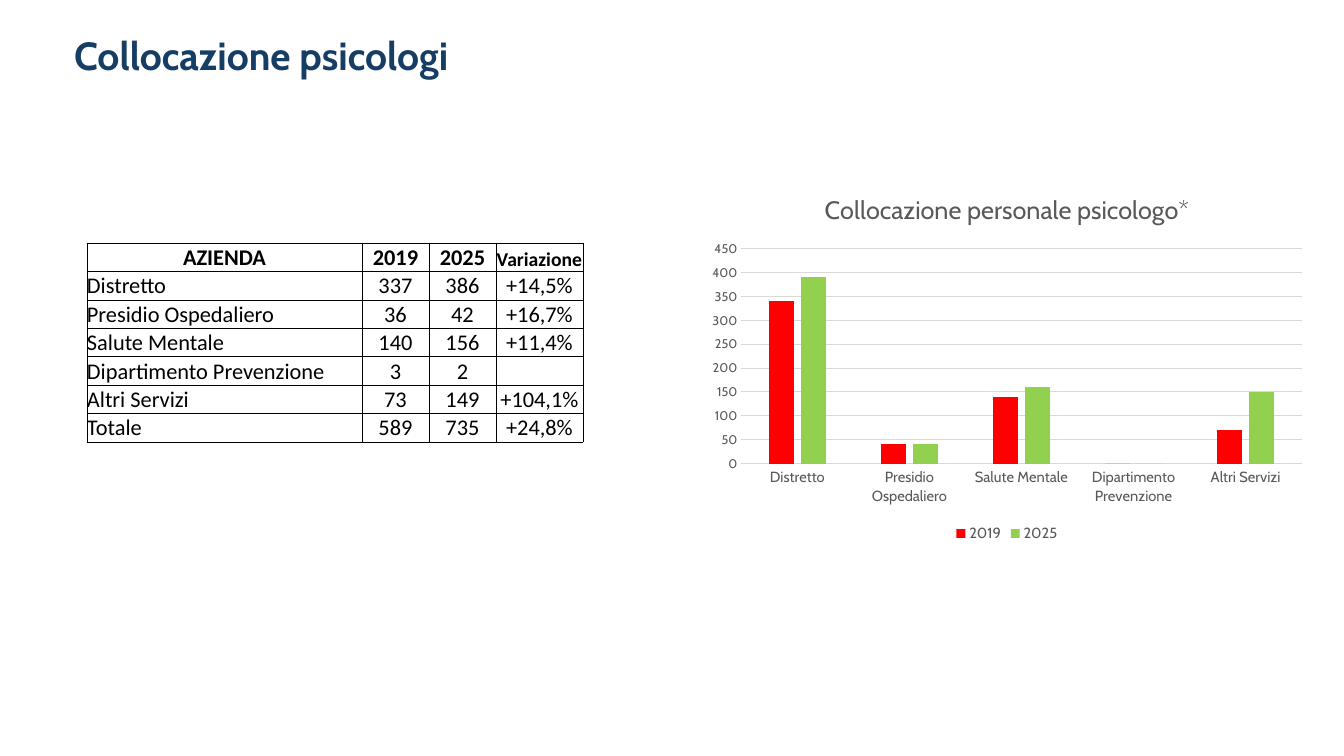
from lxml import etree
from pptx import Presentation
from pptx.chart.data import CategoryChartData
from pptx.dml.color import RGBColor
from pptx.enum.chart import XL_CHART_TYPE, XL_LEGEND_POSITION, XL_TICK_MARK
from pptx.enum.text import MSO_ANCHOR, PP_ALIGN
from pptx.oxml.ns import qn
from pptx.util import Emu, Pt

COLUMNS = XL_CHART_TYPE.COLUMN_CLUSTERED
BOTTOM_LEGEND = XL_LEGEND_POSITION.BOTTOM
NO_TICK = XL_TICK_MARK.NONE
MIDDLE, BOTTOM = MSO_ANCHOR.MIDDLE, MSO_ANCHOR.BOTTOM
LEFT, CENTER = PP_ALIGN.LEFT, PP_ALIGN.CENTER

THEME = {
    "title": {"name": "Cabin", "size": Pt(28), "bold": True, "color": "163E64"},
    "head": {"name": "Calibri", "size": Pt(16), "bold": True, "color": "000000"},
    "head_small": {"name": "Calibri", "size": Pt(14), "bold": True, "color": "000000"},
    "body": {"name": "Calibri", "size": Pt(16), "bold": False, "color": "000000"},
    "chart": {"name": "Cabin", "size": Pt(10), "bold": False, "color": "000000"},
    "chart_title": {"name": "Cabin", "size": Pt(18), "bold": False, "color": "595959"},
    "labels": {"name": "Cabin", "size": Pt(10.5), "bold": False, "color": "595959"},
    "values": {"name": "Cabin", "size": Pt(9), "bold": False, "color": "595959"},
    "grid": "D9D9D9",
    "border": "000000",
    "series": ["FF0000", "92D050"],
}


def px(n):
    return Emu(round(n * 914400 / 100.8))


def style(font, role):
    for key, value in THEME[role].items():
        if key == "color":
            font.color.rgb = RGBColor.from_string(value)
        else:
            setattr(font, key, value)


prs = Presentation()
prs.slide_width, prs.slide_height = px(1344), px(756)
s = prs.slides.add_slide(prs.slide_layouts[5])

# Title
title = s.shapes.title
title.left, title.top, title.width, title.height = px(64), px(22), px(1231), px(71)
tf = title.text_frame
tf.vertical_anchor = MIDDLE
p = tf.paragraphs[0]
p.alignment = LEFT
p.line_spacing = 0.9
r = p.add_run()
r.text = "Collocazione psicologi"
style(r.font, "title")

# Table
HEADER = ["AZIENDA", "2019", "2025", "Variazione"]
STAFF = [
    ["Distretto", 337, 386, "+14,5%"],
    ["Presidio Ospedaliero", 36, 42, "+16,7%"],
    ["Salute Mentale", 140, 156, "+11,4%"],
    ["Dipartimento Prevenzione", 3, 2, ""],
    ["Altri Servizi", 73, 149, "+104,1%"],
    ["Totale", 589, 735, "+24,8%"],
]
COL_WIDTHS = [275, 67, 67, 87]
ROW_HEIGHT = 28
rows = [HEADER] + STAFF
table = s.shapes.add_table(len(rows), len(HEADER), px(87), px(243),
                           px(sum(COL_WIDTHS)), px(ROW_HEIGHT * len(rows))).table
table.first_row = table.horz_banding = False
for col, width in zip(table.columns, COL_WIDTHS):
    col.width = px(width)
for i, row in enumerate(rows):
    table.rows[i].height = px(ROW_HEIGHT)
    for j, value in enumerate(row):
        cell = table.cell(i, j)
        cell.margin_left = cell.margin_right = cell.margin_bottom = 0
        cell.margin_top = px(1)
        cell.vertical_anchor = BOTTOM
        p = cell.text_frame.paragraphs[0]
        p.alignment = CENTER if i == 0 or j > 0 else LEFT
        if value == "":
            p._p.get_or_add_endParaRPr().set("sz", "1600")
        else:
            r = p.add_run()
            r.text = str(value)
            role = "body" if i else "head_small" if value == "Variazione" else "head"
            style(r.font, role)
        # Borders precede the fill in the cell properties
        tcPr = cell._tc.get_or_add_tcPr()
        for side in ("a:lnL", "a:lnR", "a:lnT", "a:lnB"):
            ln = etree.SubElement(tcPr, qn(side), w=str(Pt(0.5)))
            fill = etree.SubElement(ln, qn("a:solidFill"))
            etree.SubElement(fill, qn("a:srgbClr"), val=THEME["border"])
        cell.fill.background()

# Chart, drawn from the table without its total, rounded to tens
services = STAFF[:-1]
data = CategoryChartData()
data.categories = [row[0] for row in services]
for j in (1, 2):
    data.add_series(HEADER[j], [round(row[j], -1) for row in services])
chart = s.shapes.add_chart(COLUMNS, px(700), px(175), px(614), px(372), data).chart
style(chart.font, "chart")
chart.has_title = True
r = chart.chart_title.text_frame.paragraphs[0].add_run()
r.text = "Collocazione personale psicologo*"
style(r.font, "chart_title")
chart.chart_title.include_in_layout = False
chart.has_legend = True
chart.legend.position = BOTTOM_LEGEND
chart.legend.include_in_layout = False
style(chart.legend.font, "labels")

plot = chart.plots[0]
plot.gap_width, plot.overlap = 219, -27
plot.vary_by_categories = False
for series, color in zip(plot.series, THEME["series"]):
    series.format.fill.solid()
    series.format.fill.fore_color.rgb = RGBColor.from_string(color)

# Axes
cat_axis, val_axis = chart.category_axis, chart.value_axis
for axis, role in ((cat_axis, "labels"), (val_axis, "values")):
    axis.major_tick_mark = axis.minor_tick_mark = NO_TICK
    style(axis.tick_labels.font, role)
val_axis.minimum_scale, val_axis.maximum_scale, val_axis.major_unit = 0, 450, 50
val_axis.format.line.fill.background()
for line in (cat_axis.format.line, val_axis.major_gridlines.format.line):
    line.width = Pt(0.75)
    line.color.rgb = RGBColor.from_string(THEME["grid"])

prs.save("out.pptx")
